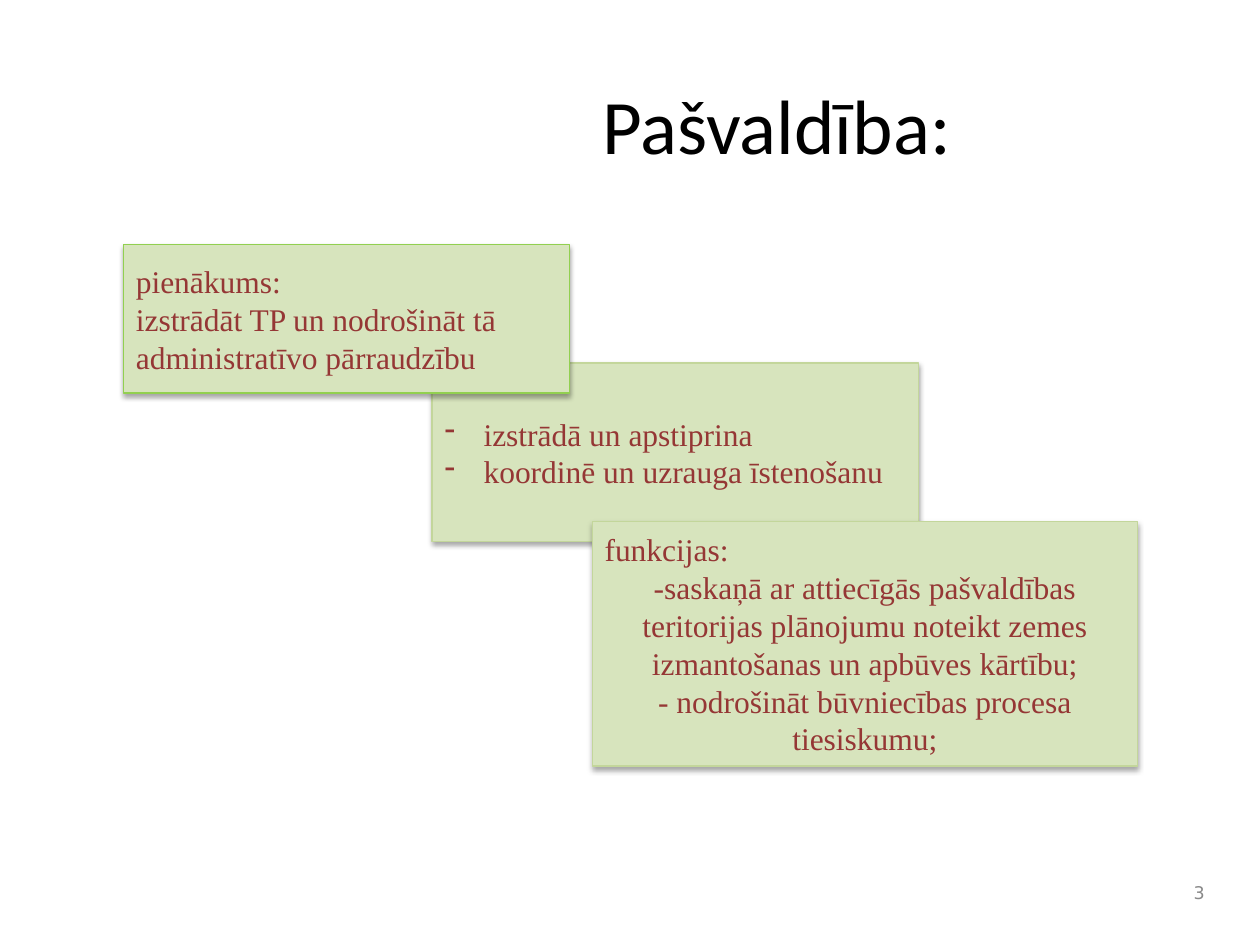
from lxml import etree
from pptx import Presentation, util as u
from pptx.dml.color import RGBColor
from pptx.enum import shapes, text
from pptx.oxml.ns import qn

BLACK = RGBColor(0x00, 0x00, 0x00)
GREY = RGBColor(0x89, 0x89, 0x89)
MAROON = RGBColor(0x95, 0x37, 0x35)
PALE_GREEN = RGBColor(0xD7, 0xE4, 0xBD)
SOFT_GREEN = RGBColor(0xC3, 0xD6, 0x9B)
BRIGHT_GREEN = RGBColor(0x92, 0xD0, 0x50)

LEFT, CENTER, RIGHT = text.PP_ALIGN.LEFT, text.PP_ALIGN.CENTER, text.PP_ALIGN.RIGHT
WIDTH, HEIGHT = 10, 7.5


class Deck:
    """Holds the style and the current slide; places are given in inches of the slide grid."""

    heading_font, body_font, number_font = "Calibri", "Times New Roman", "DejaVu Sans"

    def __init__(self):
        self.prs = Presentation()
        self.prs.slide_width, self.prs.slide_height = u.Inches(WIDTH), u.Inches(HEIGHT)
        self.s = self.prs.slides.add_slide(self.prs.slide_layouts[5])

    def set_lines(self, sp, lines, font, size, color):
        """Fill a shape with (line, alignment) pairs."""
        tf = sp.text_frame
        tf.word_wrap = True
        tf.auto_size = text.MSO_AUTO_SIZE.NONE
        tf.vertical_anchor = text.MSO_ANCHOR.MIDDLE
        tf.text = "\n".join(line for line, _ in lines)
        for p, (_, align) in zip(tf.paragraphs, lines):
            p.alignment = align
            for r in p.runs:
                r.font.name, r.font.size = font, u.Pt(size)
                r.font.color.rgb = color

    def title(self, line, *box):
        sp = self.s.shapes.title
        sp.left, sp.top, sp.width, sp.height = map(u.Inches, box)
        self.set_lines(sp, [(line, CENTER)], self.heading_font, 44, BLACK)

    def number(self, line, *box):
        sp = self.s.shapes.add_textbox(*map(u.Inches, box))
        self.set_lines(sp, [(line, RIGHT)], self.number_font, 10, GREY)

    def card(self, lines, *box, border=SOFT_GREEN, dashes=False):
        sp = self.s.shapes.add_shape(shapes.MSO_SHAPE.RECTANGLE, *map(u.Inches, box))
        sp.fill.solid()
        sp.fill.fore_color.rgb = PALE_GREEN
        sp.line.color.rgb = border
        sp.line.width = u.Pt(0.75)
        self.drop_shadow(sp)
        self.set_lines(sp, lines, self.body_font, 18, MAROON)
        if dashes:
            for p in sp.text_frame.paragraphs:
                self.dash(p)

    def drop_shadow(self, sp):
        sp.shadow.inherit = False
        effects = sp._element.spPr.find(qn("a:effectLst"))
        shadow = etree.SubElement(effects, qn("a:outerShdw"), blurRad=str(u.Pt(3.1)),
                                  dist=str(u.Pt(1.8)), dir="5400000", rotWithShape="0")
        color = etree.SubElement(shadow, qn("a:srgbClr"), val=str(BLACK))
        etree.SubElement(color, qn("a:alpha"), val="35000")

    def dash(self, p):
        """Turn a paragraph into a list item with a hanging dash."""
        pPr = p._p.get_or_add_pPr()
        indent = u.Inches(0.31)
        pPr.set("marL", str(indent))
        pPr.set("indent", str(-indent))
        etree.SubElement(pPr, qn("a:buChar"), char="-")


def main():
    deck = Deck()
    deck.title("Pašvaldība:", 2.83, 0.42, 6.67, 1.13)
    deck.number("3", 9.33, 6.92, 0.33, 0.33)
    deck.card([("izstrādā un apstiprina", LEFT),
               ("koordinē un uzrauga īstenošanu", LEFT)],
              3.43, 2.88, 3.86, 1.42, dashes=True)
    deck.card([("pienākums:", LEFT),
               ("izstrādāt TP un nodrošināt tā administratīvo pārraudzību", LEFT)],
              0.98, 1.94, 3.54, 1.18, border=BRIGHT_GREEN)
    deck.card([("funkcijas:", LEFT),
               ("-saskaņā ar attiecīgās pašvaldības teritorijas plānojumu noteikt "
                "zemes izmantošanas un apbūves kārtību;", CENTER),
               ("- nodrošināt būvniecības procesa tiesiskumu;", CENTER)],
              4.7, 4.14, 4.33, 1.94)
    deck.prs.save("out.pptx")


if __name__ == "__main__":
    main()
